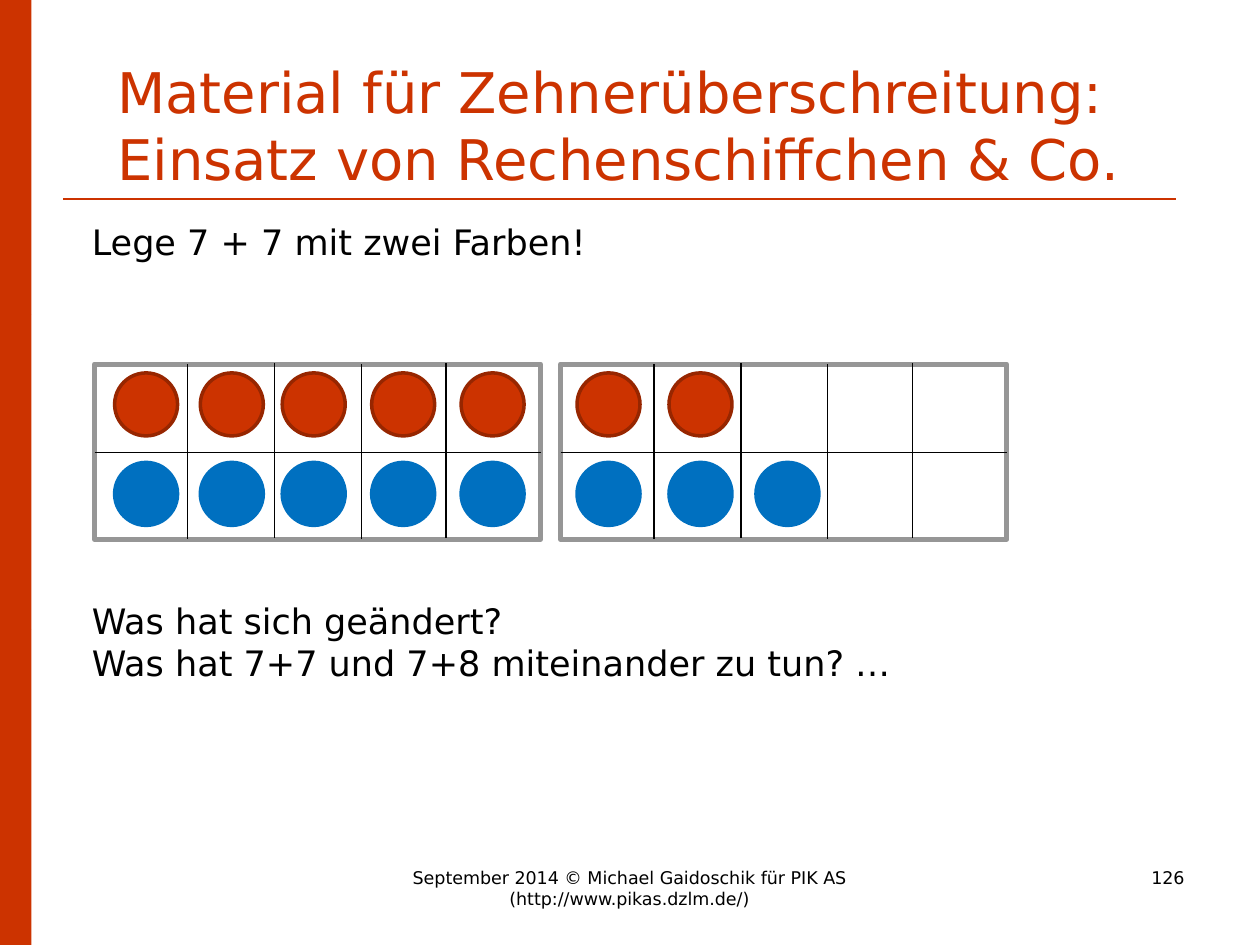
from dataclasses import dataclass

from lxml.etree import SubElement
from pptx import Presentation
from pptx.dml.color import RGBColor as Rgb
from pptx.enum.shapes import MSO_CONNECTOR as Conn, MSO_SHAPE as Kind
from pptx.enum.text import MSO_ANCHOR as Anchor, PP_ALIGN as Align
from pptx.oxml.ns import qn
from pptx.util import Inches, Pt


@dataclass(frozen=True)
class Theme:
    font: str = "DejaVu Sans"
    red: str = "CC3300"
    rim: str = "972600"
    blue: str = "0070C0"
    gray: str = "969696"
    ink: str = "000000"
    title: int = 32
    body: int = 20
    foot: int = 10


@dataclass(frozen=True)
class Box:
    left: float
    top: float
    width: float
    height: float

    def emu(self) -> tuple:
        return tuple(Inches(v) for v in (self.left, self.top, self.width, self.height))


@dataclass(frozen=True)
class Label:
    box: Box
    paras: list  # each paragraph is a list of lines
    size: int
    color: str = "000000"
    align: Align = Align.LEFT
    anchor: Anchor = Anchor.TOP
    inset: float = 0.1
    wrap: bool = True


@dataclass(frozen=True)
class Row:
    top: float
    count: int
    fill: str
    rim: str


THEME = Theme()
FRAMES = (0.75, 4.45)  # left edges of the two ten-frames
SPLITS = ((0.74, 2.89), (1.43, 2.88), (2.12, 2.89), (2.79, 2.88))  # offset, top
SPOTS = (0.91, 1.59, 2.24, 2.95, 3.66, 4.58, 5.31, 6)  # left edges of counters


def add_shape(shapes, kind: Kind, box: Box, fill: str = "", line: str = "", width: float = 0):
    shape = shapes.add_shape(kind, *box.emu())
    shape.shadow.inherit = False
    if fill:
        shape.fill.solid()
        shape.fill.fore_color.rgb = Rgb.from_string(fill)
    else:
        shape.fill.background()
    if line:
        shape.line.color.rgb = Rgb.from_string(line)
        shape.line.width = Pt(width)
    else:
        shape.line.fill.background()


def add_line(shapes, start: tuple, end: tuple, color: str, width: float) -> None:
    ends = [Inches(v) for v in (*start, *end)]
    line = shapes.add_connector(Conn.STRAIGHT, *ends)
    line.line.color.rgb = Rgb.from_string(color)
    line.line.width = Pt(width)
    SubElement(line._element.spPr, qn("a:effectLst"))


def add_label(shapes, label: Label) -> None:
    frame = shapes.add_textbox(*label.box.emu()).text_frame
    frame.word_wrap = label.wrap
    frame.vertical_anchor = label.anchor
    frame.margin_left = Inches(label.inset)
    for i, lines in enumerate(label.paras):
        para = frame.add_paragraph() if i else frame.paragraphs[0]
        para.alignment = label.align
        for j, text in enumerate(lines):
            if j:
                para.add_line_break()
            run = para.add_run()
            run.text = text
            run.font.name = THEME.font
            run.font.size = Pt(label.size)
            run.font.color.rgb = Rgb.from_string(label.color)


def add_frame(shapes, left: float) -> None:
    group = shapes.add_group_shape().shapes
    box = Box(left, 2.89, 3.54, 1.39)
    add_shape(group, Kind.RECTANGLE, box, line=THEME.gray, width=3)
    for step, top in SPLITS:
        x = left + step
        add_line(group, (x, top), (x, top + box.height), THEME.ink, 0.75)
    add_line(group, (left, 3.59), (left + box.width, 3.59), THEME.ink, 0.75)


def add_row(shapes, row: Row) -> None:
    for left in SPOTS[:row.count]:
        add_shape(shapes, Kind.OVAL, Box(left, row.top, 0.5, 0.5), row.fill, row.rim, 2)


def main() -> None:
    deck = Presentation()
    deck.slide_width, deck.slide_height = Inches(10), Inches(7.5)
    shapes = deck.slides.add_slide(deck.slide_layouts[6]).shapes

    # Side bar and title rule
    for i in range(3):
        add_shape(shapes, Kind.RECTANGLE, Box(0, 2.5 * i, 0.25, 2.5), THEME.red)
    add_line(shapes, (0.5, 1.58), (9.33, 1.58), THEME.red, 1.5)

    # Ten-frames and counters
    for left in FRAMES:
        add_frame(shapes, left)
    add_row(shapes, Row(2.96, 7, THEME.red, THEME.rim))
    add_row(shapes, Row(3.67, 8, THEME.blue, THEME.blue))

    # Title, tasks and footer
    labels = (
        Label(Box(0.55, 0.74, 8.75, 0.83),
              [["Material für Zehnerüberschreitung:", "Einsatz von Rechenschiffchen & Co."]],
              THEME.title, THEME.red, anchor=Anchor.BOTTOM, inset=0.38),
        Label(Box(0.63, 1.7, 4.19, 0.44), [["Lege 7 + 7 mit zwei Farben!"]],
              THEME.body, wrap=False),
        Label(Box(0.63, 4.71, 6.58, 0.77),
              [["Was hat sich geändert?"], ["Was hat 7+7 und 7+8 miteinander zu tun? …"]],
              THEME.body, wrap=False),
        Label(Box(2.87, 6.83, 4.25, 0.5),
              [["September 2014 © Michael Gaidoschik für PIK AS (http://www.pikas.dzlm.de/)"]],
              THEME.foot, align=Align.CENTER),
        Label(Box(7.17, 6.83, 2.33, 0.5), [["126"]], THEME.foot, align=Align.RIGHT),
    )
    for label in labels:
        add_label(shapes, label)

    deck.save("out.pptx")


if __name__ == "__main__":
    main()
